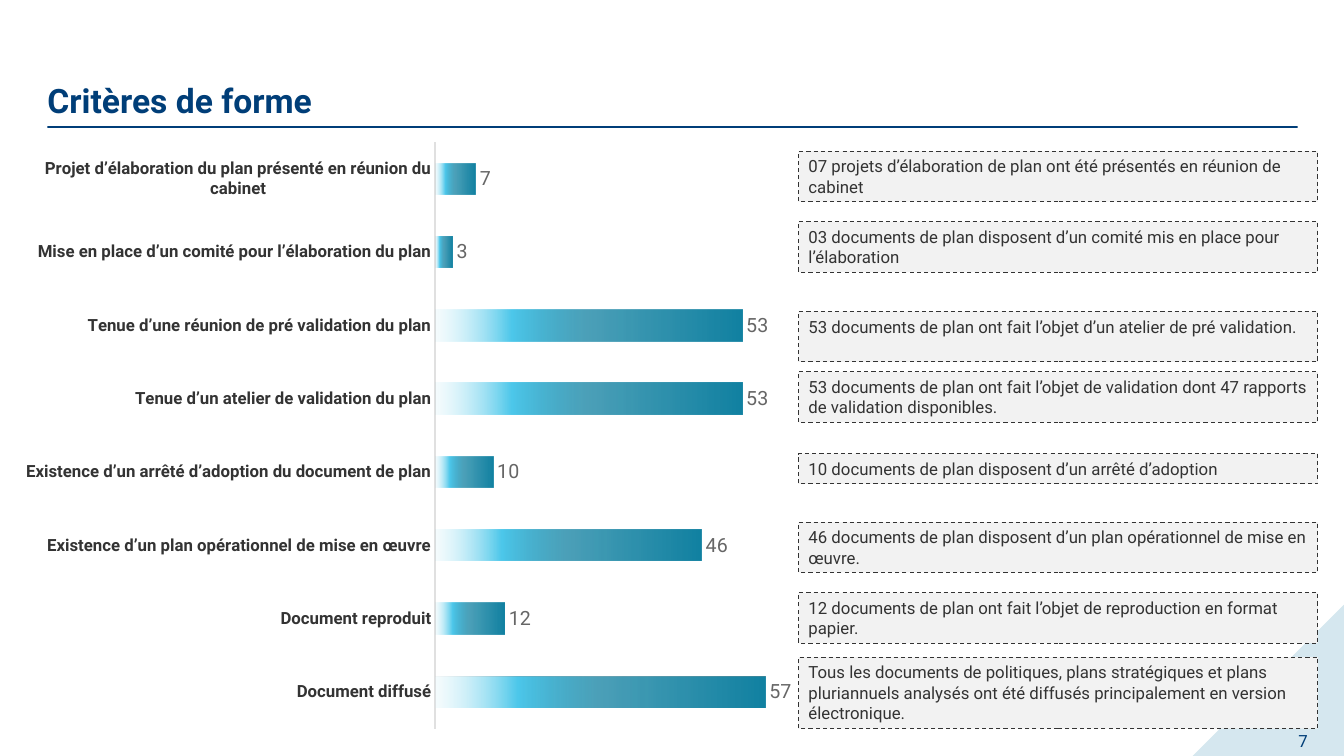
from lxml import etree
from pptx import Presentation
from pptx import util as u
from pptx.chart.data import CategoryChartData
from pptx.dml.color import RGBColor
from pptx.enum import chart as charts, dml, shapes, text
from pptx.oxml import ns

# Content
TITLE = "Critères de forme"
PAGE_NUMBER = "7"
FONT = "Roboto"
COLORS = {"navy": "003E78", "corner": "D5E7EF", "ink": "333333", "note": "F2F2F2",
          "axis": "E0E0E0", "value": "666666"}
# Criterion, number of documents
CRITERIA = [
    ("Projet d’élaboration du plan présenté en réunion du cabinet", 7),
    ("Mise en place d’un comité pour l’élaboration du plan", 3),
    ("Tenue d’une réunion de pré validation du plan", 53),
    ("Tenue d’un atelier de validation du plan", 53),
    ("Existence d’un arrêté d’adoption du document de plan", 10),
    ("Existence d’un plan opérationnel de mise en œuvre", 46),
    ("Document reproduit", 12),
    ("Document diffusé", 57),
]
# Top, height, comment
NOTES = [
    (1.5, 0.5, "07 projets d’élaboration de plan ont été présentés en réunion de cabinet"),
    (2.2, 0.5, "03 documents de plan disposent d’un comité mis en place pour l’élaboration"),
    (3.09, 0.5, "53 documents de plan ont fait l’objet d’un atelier de pré validation."),
    (3.69, 0.5, "53 documents de plan ont fait l’objet de validation dont 47 rapports "
                "de validation disponibles."),
    (4.5, 0.3, "10 documents de plan disposent d’un arrêté d’adoption"),
    (5.18, 0.5, "46 documents de plan disposent d’un plan opérationnel de mise en œuvre."),
    (5.88, 0.5, "12 documents de plan ont fait l’objet de reproduction en format papier."),
    (6.52, 0.71, "Tous les documents de politiques, plans stratégiques et plans pluriannuels "
                 "analysés ont été diffusés principalement en version électronique."),
]
# Position %, colour, opacity %
BAR_STOPS = [(0, "1282A2", 100), (51, "1282A2", 75), (75, "4DC8EB", 100), (100, "C4EDF8", 15)]
# Plot area as fractions of the chart frame
PLOT = {"x": 0.54, "y": 0.02, "w": 0.44, "h": 0.96}


def rgb(name):
    return RGBColor.from_string(COLORS[name])


def inches(*lengths):
    return [u.Inches(length) for length in lengths]


def style_font(font, size, color, bold=False):
    for key, value in {"name": FONT, "size": u.Pt(size), "bold": bold}.items():
        setattr(font, key, value)
    font.color.rgb = rgb(color)


def write(shape, words, size, color, bold=False, align=text.PP_ALIGN.LEFT, **frame_format):
    frame = shape.text_frame
    for key, value in {"word_wrap": True, **frame_format}.items():
        setattr(frame, key, value)
    para = frame.paragraphs[0]
    para.alignment = align
    span = para.add_run()
    span.text = words
    style_font(span.font, size, color, bold)


def add_block(page, kind, at, fill):
    block = page.shapes.add_shape(kind, *inches(*at))
    block.shadow.inherit = False
    block.fill.solid()
    block.fill.fore_color.rgb = rgb(fill)
    block.line.fill.background()
    return block


def add_bars(page):
    data = CategoryChartData()
    rows = CRITERIA[::-1]  # a bar chart counts from the bottom up
    data.categories = [name for name, count in rows]
    data.add_series("Series 1", [count for name, count in rows])
    frame = page.shapes.add_chart(charts.XL_CHART_TYPE.BAR_CLUSTERED,
                                  *inches(0.09, 1.29, 7.83, 6.06), data)
    chart = frame.chart
    chart.has_legend = chart.has_title = False
    style_font(chart.font, 14, "ink")

    axis = chart.category_axis
    axis.major_tick_mark = charts.XL_TICK_MARK.NONE
    axis.format.line.color.rgb = rgb("axis")
    axis.format.line.width = u.Pt(1.5)
    style_font(axis.tick_labels.font, 12, "ink", bold=True)
    values = chart.value_axis
    for key, value in {"visible": False, "has_major_gridlines": False,
                       "minimum_scale": 0, "maximum_scale": 60}.items():
        setattr(values, key, value)

    plot = chart.plots[0]
    for key, value in {"gap_width": 134, "overlap": 100, "vary_by_categories": False,
                       "has_data_labels": True}.items():
        setattr(plot, key, value)
    labels = plot.data_labels
    labels.show_value = True
    labels.position = charts.XL_LABEL_POSITION.OUTSIDE_END
    style_font(labels.font, 14, "value")

    # Bar gradient, dark at the right end
    fill = plot.series[0].format.fill
    fill.gradient()
    gradient = chart.element.find(".//" + ns.qn("c:ser")).find(".//" + ns.qn("a:gradFill"))
    for child in list(gradient):
        gradient.remove(child)
    stops = etree.SubElement(gradient, ns.qn("a:gsLst"))
    for position, color, opacity in BAR_STOPS:
        stop = etree.SubElement(stops, ns.qn("a:gs"), pos=str(position * 1000))
        shade = etree.SubElement(stop, ns.qn("a:srgbClr"), val=color)
        etree.SubElement(shade, ns.qn("a:alpha"), val=str(opacity * 1000))
    etree.SubElement(gradient, ns.qn("a:lin"), ang=str(180 * 60000), scaled="0")

    # Fixed plot area
    area = chart.element.find(".//" + ns.qn("c:plotArea"))
    for old in area.findall(ns.qn("c:layout")):
        area.remove(old)
    layout = etree.Element(ns.qn("c:layout"))
    area.insert(0, layout)
    manual = etree.SubElement(layout, ns.qn("c:manualLayout"))
    settings = {"layoutTarget": "inner", "xMode": "edge", "yMode": "edge", **PLOT}
    for key, value in settings.items():
        etree.SubElement(manual, ns.qn("c:" + key), val=str(value))


def main():
    deck = Presentation()
    deck.slide_width, deck.slide_height = inches(13.33, 7.5)
    page = deck.slides.add_slide(deck.slide_layouts[5])

    # Corner and title rule
    corner = add_block(page, shapes.MSO_SHAPE.RIGHT_TRIANGLE, (11.83, 6, 1.5, 1.5), "corner")
    corner.element.spPr.find(ns.qn("a:xfrm")).set("flipH", "1")
    add_block(page, shapes.MSO_SHAPE.RECTANGLE, (0.47, 1.25, 12.4, 0.02), "navy")

    # Title
    title = page.shapes.title
    title.left, title.top, title.width, title.height = inches(0.47, 0.19, 12.4, 1)
    write(title, TITLE, 24, "navy", bold=True, vertical_anchor=text.MSO_ANCHOR.BOTTOM,
          auto_size=text.MSO_AUTO_SIZE.NONE,
          margin_left=0, margin_top=0, margin_right=0, margin_bottom=0)

    # Page number
    number = page.shapes.add_textbox(*inches(10.17, 7.15, 2.9, 0.4))
    write(number, PAGE_NUMBER, 12, "navy", align=text.PP_ALIGN.RIGHT,
          vertical_anchor=text.MSO_ANCHOR.MIDDLE)

    # Comments beside the bars
    for top, height, words in NOTES:
        note = add_block(page, shapes.MSO_SHAPE.RECTANGLE, (7.92, top, 5.15, height), "note")
        note.line.color.rgb = rgb("ink")
        note.line.width = u.Pt(0.75)
        note.line.dash_style = dml.MSO_LINE.DASH
        write(note, words, 12, "ink", vertical_anchor=text.MSO_ANCHOR.TOP,
              auto_size=text.MSO_AUTO_SIZE.SHAPE_TO_FIT_TEXT)

    add_bars(page)
    deck.save("out.pptx")


if __name__ == "__main__":
    main()
